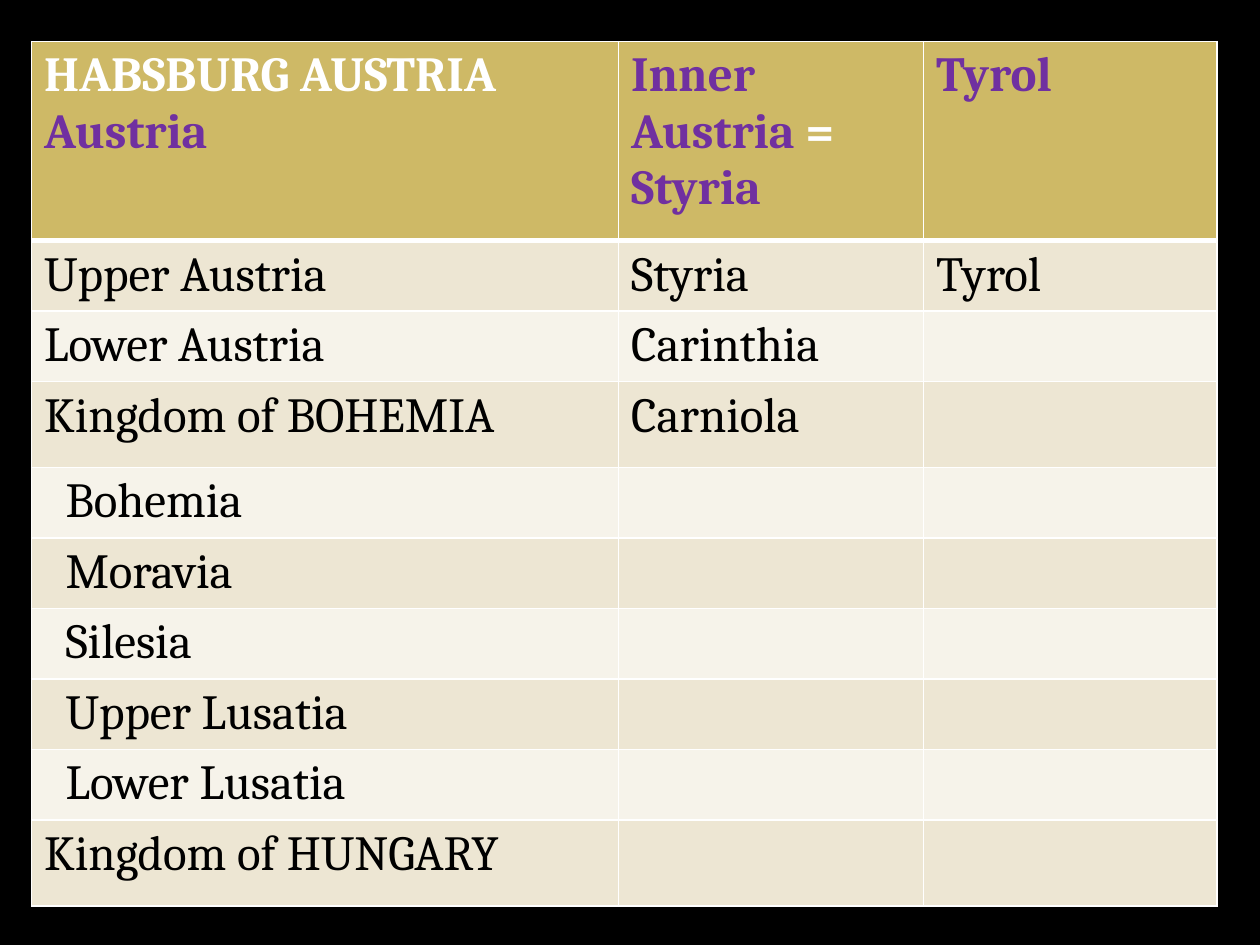
from dataclasses import dataclass

from lxml.etree import SubElement
from pptx import Presentation
from pptx.dml.color import RGBColor
from pptx.oxml.ns import qn
from pptx.util import Inches, Pt


@dataclass(frozen=True)
class Theme:
    """Colours, type and line widths of the slide."""
    background: str = "000000"
    header: str = "CEB966"
    bands: tuple = ("EDE6D3", "F6F3EA")
    light: str = "FFFFFF"
    accent: str = "7030A0"
    body: str = "000000"
    font: str = "Cambria"
    size: int = 28
    rule: int = 1
    header_rule: int = 3


THEME = Theme()
LANDS_BOX = (0.25, 0.33, 9.41, 6.87)
COLUMN_WIDTHS = (4.66, 2.42, 2.33)
HEADER_HEIGHT, ROW_HEIGHT, KINGDOM_HEIGHT = 1.58, 0.56, 0.68
INDENT = 0.17
HEADINGS = (
    ((("HABSBURG AUSTRIA", THEME.light),), (("Austria", THEME.accent),)),
    ((("Inner Austria ", THEME.accent), ("= ", THEME.light), ("Styria", THEME.accent)),),
    ((("Tyrol", THEME.accent),),),
)
LANDS = (
    ("Upper Austria", "Styria", "Tyrol"),
    ("Lower Austria", "Carinthia", ""),
    ("Kingdom of BOHEMIA", "Carniola", ""),
    ("Bohemia", "", ""),
    ("Moravia", "", ""),
    ("Silesia", "", ""),
    ("Upper Lusatia", "", ""),
    ("Lower Lusatia", "", ""),
    ("Kingdom of HUNGARY", "", ""),
)
BOHEMIAN_LANDS = {"Bohemia", "Moravia", "Silesia", "Upper Lusatia", "Lower Lusatia"}


def add_run(paragraph, text, color, bold):
    """Append one formatted run to a paragraph."""
    run = paragraph.add_run()
    run.text = text
    for attribute, value in {"name": THEME.font, "size": Pt(THEME.size), "bold": bold}.items():
        setattr(run.font, attribute, value)
    run.font.color.rgb = RGBColor.from_string(color)


def style_cell(cell, fill, top, bottom):
    """Give a cell its rules and its fill."""
    properties = cell._tc.get_or_add_tcPr()
    widths = {"a:lnL": THEME.rule, "a:lnR": THEME.rule, "a:lnT": top, "a:lnB": bottom}
    for side, width in widths.items():
        line = SubElement(properties, qn(side), w=str(Pt(width)))
        SubElement(SubElement(line, qn("a:solidFill")), qn("a:srgbClr"), val=THEME.light)
    cell.fill.solid()
    cell.fill.fore_color.rgb = RGBColor.from_string(fill)


def fill_heading(cell, paragraphs):
    """Write the paragraphs of a column heading."""
    style_cell(cell, THEME.header, THEME.rule, THEME.header_rule)
    for index, runs in enumerate(paragraphs):
        paragraph = cell.text_frame.add_paragraph() if index else cell.text_frame.paragraphs[0]
        for text, color in runs:
            add_run(paragraph, text, color, True)


def fill_land(cell, land, row):
    """Write one land into a banded cell, indented under its kingdom."""
    top = THEME.rule if row else THEME.header_rule
    style_cell(cell, THEME.bands[row % 2], top, THEME.rule)
    if land:
        paragraph = cell.text_frame.paragraphs[0]
        add_run(paragraph, land, THEME.body, False)
        if land in BOHEMIAN_LANDS:
            paragraph._p.get_or_add_pPr().set("marL", str(Inches(INDENT)))


def add_lands_table(slide, box):
    """Place the table of Habsburg lands in the given box."""
    bounds = [Inches(length) for length in box]
    table = slide.shapes.add_table(len(LANDS) + 1, len(HEADINGS), *bounds).table
    for column, width in zip(table.columns, COLUMN_WIDTHS):
        column.width = Inches(width)
    table.rows[0].height = Inches(HEADER_HEIGHT)
    for column, heading in enumerate(HEADINGS):
        fill_heading(table.cell(0, column), heading)
    for row, lands in enumerate(LANDS):
        height = KINGDOM_HEIGHT if lands[0].startswith("Kingdom") else ROW_HEIGHT
        table.rows[row + 1].height = Inches(height)
        for column, land in enumerate(lands):
            fill_land(table.cell(row + 1, column), land, row)


def main():
    """Build the slide and save it."""
    presentation = Presentation()
    presentation.slide_width, presentation.slide_height = Inches(10), Inches(7.5)
    slide = presentation.slides.add_slide(presentation.slide_layouts[6])
    slide.background.fill.solid()
    slide.background.fill.fore_color.rgb = RGBColor.from_string(THEME.background)
    add_lands_table(slide, LANDS_BOX)
    presentation.save("out.pptx")


if __name__ == "__main__":
    main()
